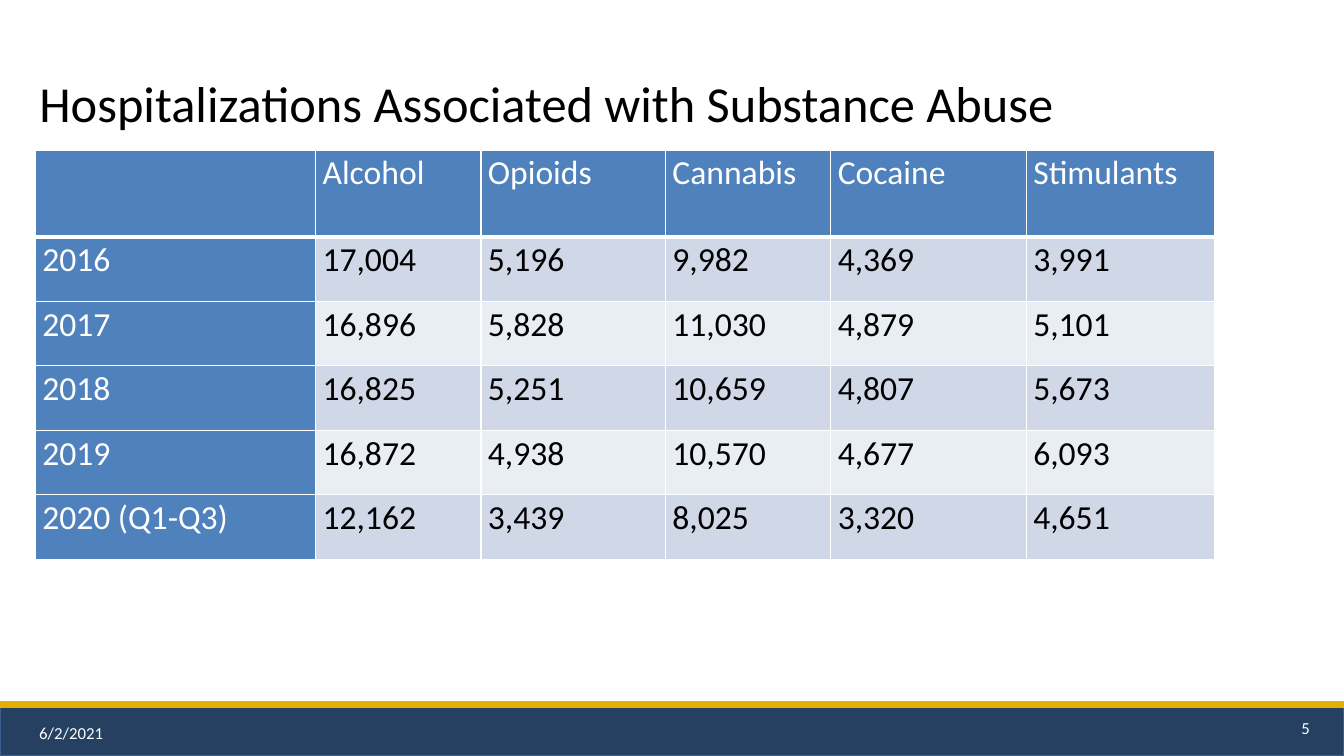
import dataclasses
import lxml.etree
import pptx
import pptx.dml.color
import pptx.enum.shapes
import pptx.enum.text
import pptx.oxml
import pptx.oxml.ns
import pptx.util

Inches = pptx.util.Inches
Align = pptx.enum.text.PP_ALIGN
Anchor = pptx.enum.text.MSO_ANCHOR
qn = pptx.oxml.ns.qn


@dataclasses.dataclass(frozen=True)
class Theme:
    font: str = "Calibri"
    title_size: int = 36
    table_size: int = 24
    footer_size: int = 12
    black: str = "000000"
    white: str = "FFFFFF"
    navy: str = "254061"
    navy_edge: str = "3A5F8C"
    gold: str = "E6AF00"
    header: str = "4F81BD"
    bands: tuple = ("D0D8E8", "E9EDF4")


theme = Theme()
rgb = pptx.dml.color.RGBColor.from_string


def write(frame, text, size, color, align=Align.LEFT, spacing=1.0):
    para = frame.paragraphs[0]
    para.alignment = align
    para.line_spacing = spacing
    span = para.add_run()
    span.text = text
    span.font.name = theme.font
    span.font.size = pptx.util.Pt(size)
    span.font.color.rgb = rgb(color)


def set_borders(cell, bottom):
    properties = cell._tc.get_or_add_tcPr()
    for index, (side, points) in enumerate([("L", 1), ("R", 1), ("T", 1), ("B", bottom)]):
        line = lxml.etree.Element(qn(f"a:ln{side}"), w=str(pptx.util.Pt(points)))
        fill = lxml.etree.SubElement(line, qn("a:solidFill"))
        lxml.etree.SubElement(fill, qn("a:srgbClr"), val=theme.white)
        properties.insert(index, line)


deck = pptx.Presentation()
deck.slide_width = Inches(13.33)
deck.slide_height = Inches(7.5)
page = deck.slides.add_slide(deck.slide_layouts[5])

footer_bar = page.shapes.add_shape(
    pptx.enum.shapes.MSO_SHAPE.RECTANGLE, 0, Inches(6.99), Inches(13.33), Inches(0.51))
footer_bar.shadow.inherit = False
footer_bar.fill.solid()
footer_bar.fill.fore_color.rgb = rgb(theme.navy)
footer_bar.line.color.rgb = rgb(theme.navy_edge)
footer_bar.line.width = pptx.util.Pt(1)

gold_rule = page.shapes.add_connector(
    pptx.enum.shapes.MSO_CONNECTOR.STRAIGHT, 0, Inches(6.99), Inches(13.33), Inches(6.99))
gold_rule.line.color.rgb = rgb(theme.gold)
gold_rule.line.width = pptx.util.Pt(4.5)
lxml.etree.SubElement(gold_rule._element.spPr, qn("a:effectLst"))

title = page.shapes.title
title.left, title.top = Inches(0.29), Inches(0.22)
title.width, title.height = Inches(11.12), Inches(1.15)
title.fill.solid()
title.fill.fore_color.rgb = rgb(theme.white)
title.text_frame.auto_size = pptx.enum.text.MSO_AUTO_SIZE.NONE
title.text_frame.vertical_anchor = Anchor.BOTTOM
write(title.text_frame, "Hospitalizations Associated with Substance Abuse",
      theme.title_size, theme.black, spacing=0.9)

for text, left, top, align in [("6/2/2021", 0.29, 7.07, Align.LEFT),
                               ("5", 10.09, 7.02, Align.RIGHT)]:
    box = page.shapes.add_textbox(Inches(left), Inches(top), Inches(3), Inches(0.4))
    box.text_frame.word_wrap = True
    box.text_frame.vertical_anchor = Anchor.MIDDLE
    write(box.text_frame, text, theme.footer_size, theme.white, align=align)

admissions = [
    ["", "Alcohol", "Opioids", "Cannabis", "Cocaine", "Stimulants"],
    ["2016", "17,004", "5,196", "9,982", "4,369", "3,991"],
    ["2017", "16,896", "5,828", "11,030", "4,879", "5,101"],
    ["2018", "16,825", "5,251", "10,659", "4,807", "5,673"],
    ["2019", "16,872", "4,938", "10,570", "4,677", "6,093"],
    ["2020 (Q1-Q3)", "12,162", "3,439", "8,025", "3,320", "4,651"],
]
column_widths = [2.78, 1.64, 1.83, 1.64, 1.94, 1.87]
row_heights = [0.86] + [0.64] * 5
table = page.shapes.add_table(
    len(row_heights), len(column_widths), Inches(0.35), Inches(1.49),
    Inches(sum(column_widths)), Inches(sum(row_heights))).table
table.first_col = True
for column, width in zip(table.columns, column_widths):
    column.width = Inches(width)
for row, height in zip(table.rows, row_heights):
    row.height = Inches(height)

for row_index, values in enumerate(admissions):
    for column_index, value in enumerate(values):
        cell = table.cell(row_index, column_index)
        is_heading = row_index == 0 or column_index == 0
        cell.margin_left = cell.margin_right = Inches(0.07)
        cell.margin_top = cell.margin_bottom = 0
        cell.fill.solid()
        cell.fill.fore_color.rgb = rgb(
            theme.header if is_heading else theme.bands[(row_index - 1) % 2])
        set_borders(cell, bottom=3 if row_index == 0 else 1)
        if value:
            write(cell.text_frame, value, theme.table_size,
                  theme.white if is_heading else theme.black, spacing=1.07)

deck.save("out.pptx")
